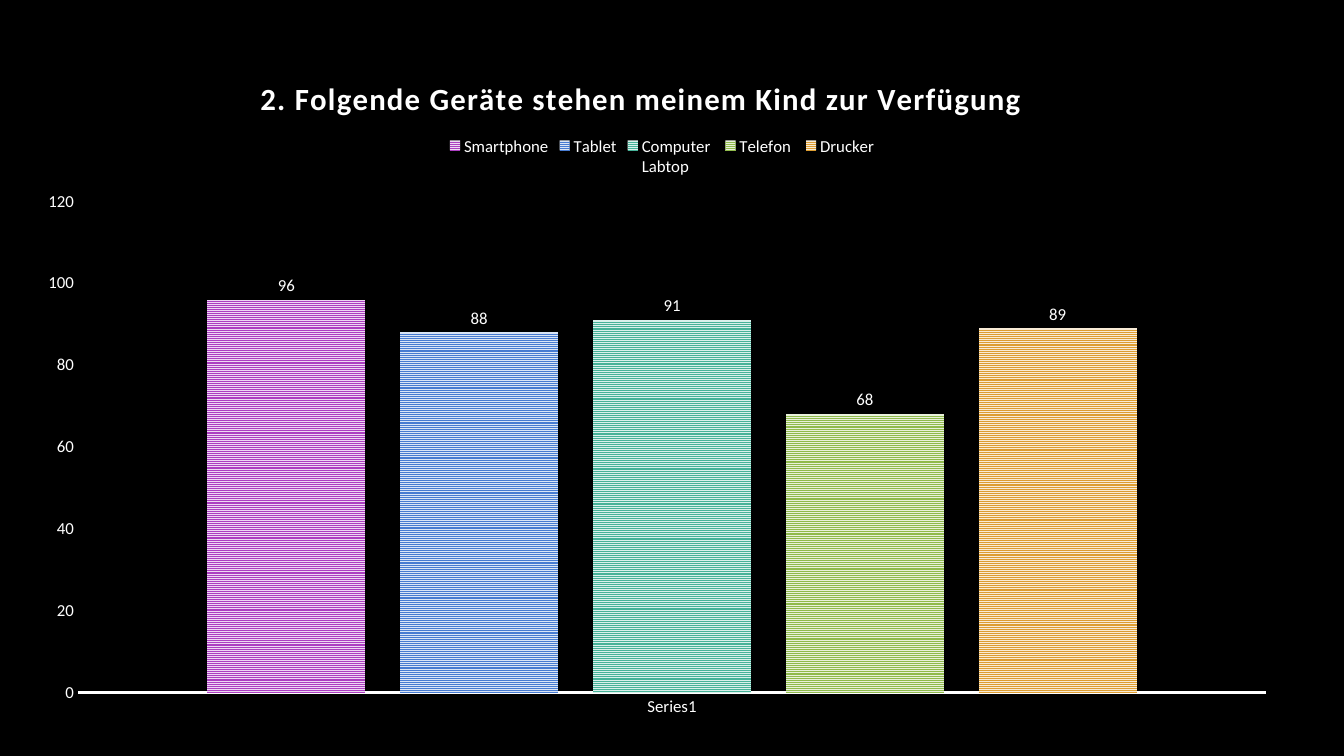
"""Build a slide with a column chart of the devices available to a child."""
import pptx
import pptx.chart.data
import pptx.dml.color
import pptx.enum.chart
import pptx.enum.dml
import pptx.oxml
import pptx.oxml.ns
import pptx.util
from pptx.util import Inches

QUESTION = "2. Folgende Geräte stehen meinem Kind zur Verfügung"
CATEGORY = "Series1"
DEVICES = [
    ("Smartphone", 96, "AC3EC1", "EED8F3"),
    ("Tablet", 88, "477BD1", "DAE5F6"),
    ("Computer \nLabtop", 91, "46B298", "D9F0EB"),
    ("Telefon ", 68, "90BA4C", "E9F1DB"),
    ("Drucker", 89, "DD9D31", "F8EBD6"),
]
LAYOUTS = [
    ("c:title", 1, {"x": 0.18, "y": 0.04}),
    ("c:legend", 1, {"x": 0.33, "y": 0.13}),
    ("c:plotArea", 0, {"x": 0.04, "y": 0.23, "w": 0.94, "h": 0.72}),
]
WHITE = "FFFFFF"


def paint(color, hex_value):
    color.rgb = pptx.dml.color.RGBColor.from_string(hex_value)


def style_font(font, size, bold=False):
    font.name = "Calibri"
    font.size = pptx.util.Pt(size)
    font.bold = bold
    paint(font.color, WHITE)


def place(parent, index, fractions):
    for old_layout in parent.findall(pptx.oxml.ns.qn("c:layout")):
        parent.remove(old_layout)
    inner = '<c:layoutTarget val="inner"/>' if "w" in fractions else ""
    modes = "".join(f'<c:{key}Mode val="edge"/>' for key in "xy")
    sizes = "".join(f'<c:{key} val="{value}"/>' for key, value in fractions.items())
    parent.insert(index, pptx.oxml.parse_xml(
        f'<c:layout {pptx.oxml.ns.nsdecls("c")}><c:manualLayout>'
        f"{inner}{modes}{sizes}</c:manualLayout></c:layout>"))


def style_axes(chart):
    for axis in (chart.category_axis, chart.value_axis):
        axis.major_tick_mark = pptx.enum.chart.XL_TICK_MARK.NONE
        axis.minor_tick_mark = pptx.enum.chart.XL_TICK_MARK.NONE
        axis.has_major_gridlines = False
        style_font(axis.tick_labels.font, 12)
    baseline = chart.category_axis.format.line
    paint_line(baseline)
    chart.value_axis.format.line.fill.background()
    chart.value_axis.minimum_scale = 0
    chart.value_axis.maximum_scale = 120
    chart.value_axis.major_unit = 20


def paint_line(line):
    line.width = pptx.util.Pt(1.5)
    paint(line.color, WHITE)


def style_columns(plot):
    plot.gap_width = 164
    plot.overlap = -22
    plot.vary_by_categories = False
    for series, (_, _, stripe, ground) in zip(plot.series, DEVICES):
        fill = series.format.fill
        fill.patterned()
        fill.pattern = pptx.enum.dml.MSO_PATTERN.NARROW_HORIZONTAL
        paint(fill.fore_color, stripe)
        paint(fill.back_color, ground)
        series.format.line.fill.background()
        labels = series.data_labels
        labels.show_value = True
        labels.position = pptx.enum.chart.XL_LABEL_POSITION.OUTSIDE_END
        style_font(labels.font, 12)


def add_device_chart(slide):
    data = pptx.chart.data.CategoryChartData()
    data.categories = [CATEGORY]
    for device, count, _, _ in DEVICES:
        data.add_series(device, [count])
    chart = slide.shapes.add_chart(
        pptx.enum.chart.XL_CHART_TYPE.COLUMN_CLUSTERED,
        Inches(0.27), Inches(0.44), Inches(12.54), Inches(6.77), data).chart
    style_font(chart.font, 10)

    chart.has_title = True
    question = chart.chart_title.text_frame.paragraphs[0].add_run()
    question.text = QUESTION
    style_font(question.font, 22, bold=True)
    question.font._element.set("spc", "100")

    chart.has_legend = True
    chart.legend.position = pptx.enum.chart.XL_LEGEND_POSITION.TOP
    chart.legend.include_in_layout = False
    style_font(chart.legend.font, 12)

    style_axes(chart)
    style_columns(chart.plots[0])
    for tag, index, fractions in LAYOUTS:
        place(chart.element.xpath(f"c:chart/{tag}")[0], index, fractions)


def main():
    deck = pptx.Presentation()
    deck.slide_width = Inches(13.33)
    deck.slide_height = Inches(7.5)
    slide = deck.slides.add_slide(deck.slide_layouts[6])
    slide.background.fill.solid()
    paint(slide.background.fill.fore_color, "000000")
    add_device_chart(slide)
    deck.save("out.pptx")


if __name__ == "__main__":
    main()
